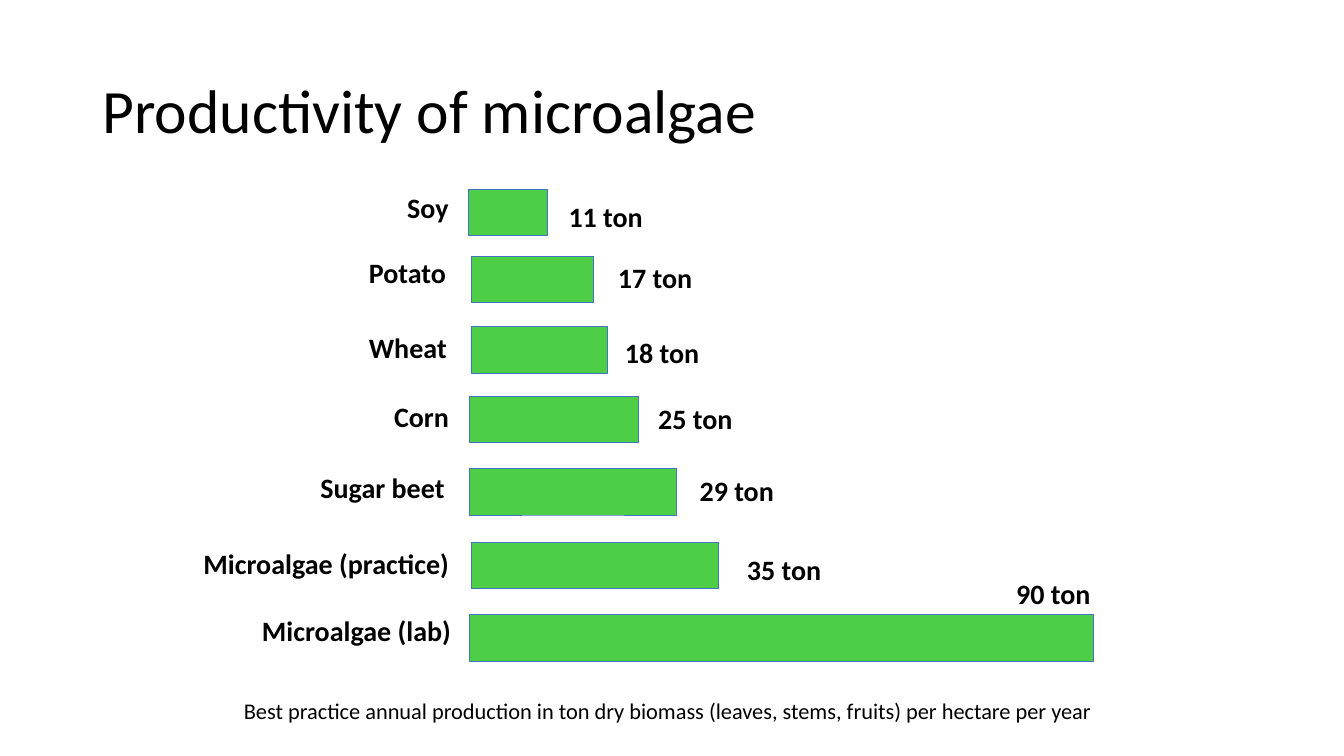
from collections import namedtuple

from pptx import Presentation
from pptx.dml.color import RGBColor
from pptx.enum.shapes import MSO_SHAPE as Preset
from pptx.enum.text import MSO_ANCHOR as Anchor
from pptx.util import Inches, Pt

COLUMNS, ROWS = 13.33, 7.5
BAR_HEIGHT, LABEL_HEIGHT, VALUE_WIDTH = 0.46, 0.44, 0.95

Box = namedtuple("Box", "left top width height")
Crop = namedtuple(
    "Crop", "name name_width name_gap name_drop left top width tons value_gap value_drop"
)

CROPS = [
    Crop("Soy", 0.62, 0.09, -0.04, 0, 0, 0.78, 11, 0.11, 0.05),
    Crop("Potato", 0.99, 0.13, -0.05, 0.03, 0.66, 1.21, 17, 0.14, 0),
    Crop("Wheat", 0.99, 0.12, -0.01, 0.02, 1.36, 1.35, 18, 0.08, 0.04),
    Crop("Corn", 0.75, 0.1, -0.02, 0.01, 2.05, 1.67, 25, 0.1, 0),
    Crop("Sugar beet", 1.45, 0.13, -0.03, 0.01, 2.77, 2.05, 29, 0.13, 0),
    Crop("Microalgae (practice)", 2.67, 0.09, -0.01, 0.03, 3.5, 2.45, 35, 0.18, 0.05),
    Crop("Microalgae (lab)", 2.1, 0.06, -0.06, 0.01, 4.22, 6.18, 90, -0.86, -0.43),
]


def color(value):
    return RGBColor.from_string(value)


def add_text(slide, box, text, size, bold=False, wrap=True, anchor=Anchor.TOP):
    shape = slide.shapes.add_textbox(*map(Inches, box))
    frame = shape.text_frame
    frame.word_wrap = wrap
    frame.vertical_anchor = anchor
    paragraph = frame.paragraphs[0]
    run = paragraph.add_run()
    run.text = text
    run.font.name = "Calibri"
    run.font.size = Pt(size)
    run.font.bold = bold
    run.font.color.rgb = color("000000")
    return paragraph


def add_title(slide, box):
    paragraph = add_text(slide, box, "Productivity of microalgae", 44, anchor=Anchor.MIDDLE)
    paragraph.line_spacing = 0.9


def add_bar(slide, box):
    shape = slide.shapes.add_shape(Preset.RECTANGLE, *map(Inches, box))
    shape.shadow.inherit = False
    shape.fill.solid()
    shape.fill.fore_color.rgb = color("4ECD47")
    shape.line.color.rgb = color("4472C4")
    shape.line.width = Pt(0.5)


def add_yields(slide, box):
    for crop in CROPS:
        left, top = box.left + crop.left, box.top + crop.top
        name_left = left - crop.name_gap - crop.name_width
        value_left = left + crop.width + crop.value_gap
        add_bar(slide, Box(left, top, crop.width, BAR_HEIGHT))
        labels = [
            (crop.name, name_left, crop.name_drop, crop.name_width),
            (f"{crop.tons} ton", value_left, crop.value_drop, VALUE_WIDTH),
        ]
        for text, label_left, drop, width in labels:
            label = Box(label_left, top + drop, width, LABEL_HEIGHT)
            add_text(slide, label, text, 20, bold=True, wrap=False)


def add_note(slide, box):
    text = (
        "Best practice annual production in ton dry biomass "
        "(leaves, stems, fruits) per hectare per year"
    )
    add_text(slide, box, text, 16)


def main():
    presentation = Presentation()
    presentation.slide_width = Inches(COLUMNS)
    presentation.slide_height = Inches(ROWS)
    slide = presentation.slides.add_slide(presentation.slide_layouts[6])
    add_title(slide, Box(0.92, 0.4, 11.5, 1.45))
    add_yields(slide, Box(4.65, 1.88, 6.19, 4.68))
    add_note(slide, Box(2.32, 6.87, 9.05, 0.37))
    presentation.save("out.pptx")


if __name__ == "__main__":
    main()
